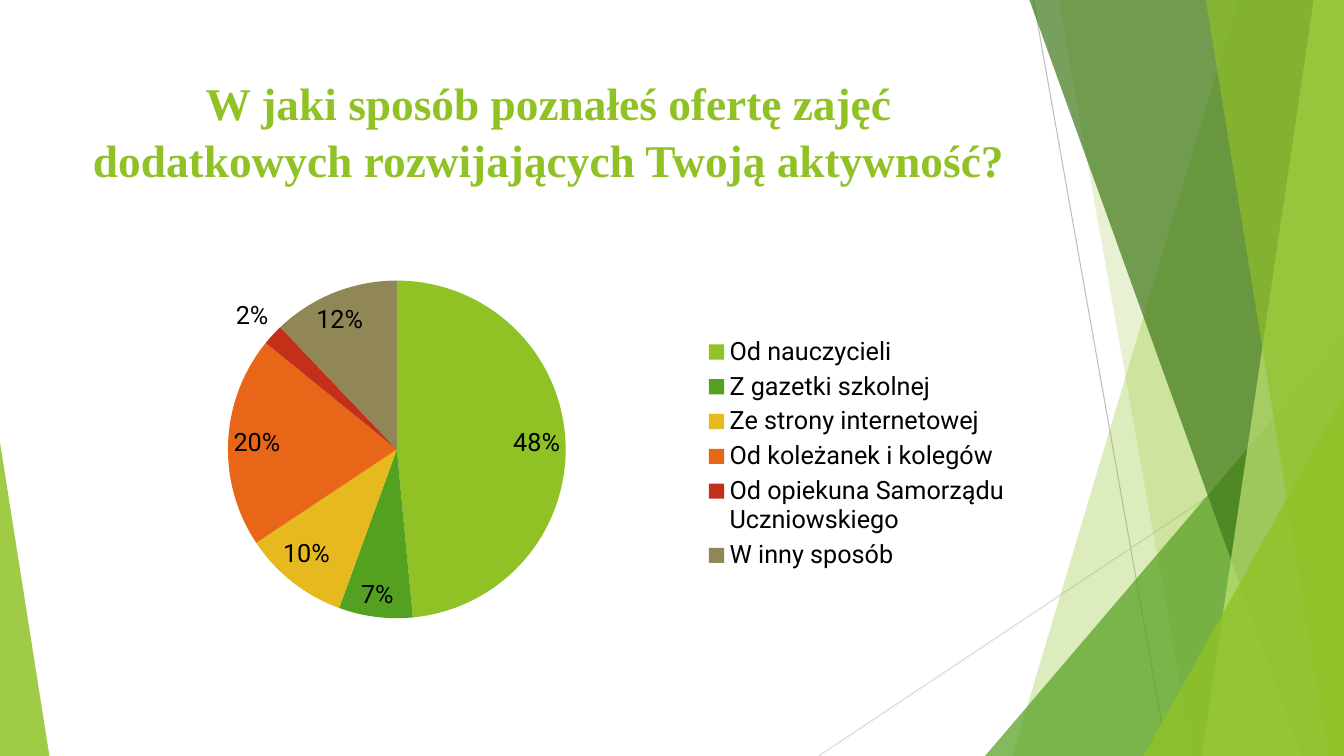
from dataclasses import dataclass

from lxml.etree import SubElement
from pptx import Presentation
from pptx.chart.data import CategoryChartData
from pptx.dml.color import RGBColor
from pptx.enum.chart import XL_CHART_TYPE, XL_LABEL_POSITION, XL_LEGEND_POSITION
from pptx.enum.shapes import MSO_CONNECTOR, MSO_SHAPE
from pptx.enum.text import MSO_ANCHOR, PP_ALIGN
from pptx.oxml import parse_xml
from pptx.oxml.ns import nsdecls, qn
from pptx.util import Inches, Pt


@dataclass(frozen=True)
class Theme:
    lime: str = "90C226"
    green: str = "54A021"
    forest: str = "3F7819"
    pale: str = "C0E474"
    gold: str = "E6B91E"
    orange: str = "E76618"
    red: str = "C42F1A"
    olive: str = "918655"
    black: str = "000000"
    grey: str = "BFBFBF"
    light_grey: str = "D9D9D9"
    title_font: str = "Times New Roman"
    chart_font: str = "Roboto"
    title_size: float = 32.4
    chart_size: float = 18


THEME = Theme()
WIDTH, HEIGHT = 13.33, 7.5
TITLE = "W jaki sposób poznałeś ofertę zajęć dodatkowych rozwijających Twoją aktywność?"
ANSWERS = [
    ("Od nauczycieli", 48, THEME.lime),
    ("Z gazetki szkolnej", 7, THEME.green),
    ("Ze strony internetowej", 10, THEME.gold),
    ("Od koleżanek i kolegów", 20, THEME.orange),
    ("Od opiekuna Samorządu Uczniowskiego", 2, THEME.red),
    ("W inny sposób", 12, THEME.olive),
]


def paint(shape, color, opacity):
    """Fill a shape with a translucent colour, without outline or shadow."""
    shape.shadow.inherit = False
    shape.line.fill.background()
    shape.fill.solid()
    shape.fill.fore_color.rgb = RGBColor.from_string(color)
    color_node = shape.fill._xPr.find(f"{qn('a:solidFill')}/{qn('a:srgbClr')}")
    SubElement(color_node, qn("a:alpha"), val=str(opacity * 1000))


def add_hairline(slide, start, end, color):
    line = slide.shapes.add_connector(
        MSO_CONNECTOR.STRAIGHT, *(Inches(value) for value in start + end))
    line.line.color.rgb = RGBColor.from_string(color)
    line.line.width = Pt(0.75)
    SubElement(line._element.spPr, qn("a:effectLst"))


def add_edge_band(slide, top_x, bottom_x, color, opacity):
    """Add a full-height band from a slanted left side to the right slide edge."""
    corners = [(WIDTH, 0), (WIDTH, HEIGHT), (bottom_x, HEIGHT)]
    builder = slide.shapes.build_freeform(Inches(top_x), 0)
    builder.add_line_segments([(Inches(x), Inches(y)) for x, y in corners])
    paint(builder.convert_to_shape(), color, opacity)


def add_corner_triangle(slide, left, width, height, apex, color, opacity):
    """Add a triangle that stands on the bottom edge of the slide."""
    triangle = slide.shapes.add_shape(
        MSO_SHAPE.ISOSCELES_TRIANGLE, Inches(left), Inches(HEIGHT - height),
        Inches(width), Inches(height))
    triangle.adjustments[0] = apex
    paint(triangle, color, opacity)


def add_title(slide):
    box = slide.shapes.add_textbox(Inches(0.74), Inches(0.67), Inches(9.4), Inches(1.44))
    frame = box.text_frame
    frame.word_wrap = True
    frame.vertical_anchor = MSO_ANCHOR.TOP
    frame.text = TITLE
    para = frame.paragraphs[0]
    para.alignment = PP_ALIGN.CENTER
    para.line_spacing = 1.05
    font = para.runs[0].font
    font.name, font.size, font.bold = THEME.title_font, Pt(THEME.title_size), True
    font.color.rgb = RGBColor.from_string(THEME.lime)


def manual_layout(left, top, width, height, inner=False):
    """Return a chart layout element; the lengths are fractions of the chart."""
    target = '<c:layoutTarget val="inner"/>' if inner else ""
    return parse_xml(
        f'<c:layout {nsdecls("c")}><c:manualLayout>{target}'
        '<c:xMode val="edge"/><c:yMode val="edge"/>'
        f'<c:x val="{left}"/><c:y val="{top}"/><c:w val="{width}"/><c:h val="{height}"/>'
        '</c:manualLayout></c:layout>')


def add_answer_pie(slide):
    data = CategoryChartData()
    data.categories = [name for name, _, _ in ANSWERS]
    data.add_series("Series 1", [value for _, value, _ in ANSWERS])
    chart = slide.shapes.add_chart(
        XL_CHART_TYPE.PIE, Inches(0.74), Inches(2.36), Inches(9.4), Inches(4.24), data).chart
    chart.has_title = False
    chart.font.name, chart.font.size = THEME.chart_font, Pt(THEME.chart_size)
    chart.font.color.rgb = RGBColor.from_string(THEME.black)

    plot = chart.plots[0]
    plot.vary_by_categories = True
    for index, (_, _, color) in enumerate(ANSWERS):
        fill = plot.series[0].points[index].format.fill
        fill.solid()
        fill.fore_color.rgb = RGBColor.from_string(color)

    plot.has_data_labels = True
    labels = plot.data_labels
    labels.show_percentage, labels.show_value = True, False
    labels.number_format, labels.number_format_is_linked = "0%", False
    labels.position = XL_LABEL_POSITION.BEST_FIT

    chart.has_legend = True
    legend = chart.legend
    legend.position = XL_LEGEND_POSITION.RIGHT
    legend.include_in_layout = False
    legend._element.find(qn("c:legendPos")).addnext(manual_layout(0.66, 0.22, 0.33, 0.57))
    plot_area = chart._chartSpace.chart.plotArea
    for layout in plot_area.findall(qn("c:layout")):
        plot_area.remove(layout)
    plot_area.insert(0, manual_layout(0.16, 0.1, 0.36, 0.79, inner=True))


def add_decoration(slide):
    add_hairline(slide, (10.25, 0), (11.58, HEIGHT), THEME.grey)
    add_hairline(slide, (WIDTH, 4.03), (8.12, HEIGHT), THEME.light_grey)
    add_edge_band(slide, 12.28, 10.04, THEME.lime, 30)
    add_edge_band(slide, 10.5, 11.83, THEME.lime, 20)
    add_corner_triangle(slide, 9.77, 3.56, 4.17, 1, THEME.green, 72)
    add_edge_band(slide, 10.21, 12.91, THEME.forest, 70)
    add_edge_band(slide, 13.03, 11.92, THEME.pale, 70)
    add_edge_band(slide, 11.96, 13.18, THEME.lime, 65)
    add_corner_triangle(slide, 11.34, 1.99, 3.57, 1, THEME.lime, 80)
    add_corner_triangle(slide, 0, 0.49, 3.11, 0, THEME.lime, 85)


def main():
    deck = Presentation()
    deck.slide_width, deck.slide_height = Inches(WIDTH), Inches(HEIGHT)
    slide = deck.slides.add_slide(deck.slide_layouts[6])
    add_decoration(slide)
    add_title(slide)
    add_answer_pie(slide)
    deck.save("out.pptx")


if __name__ == "__main__":
    main()
